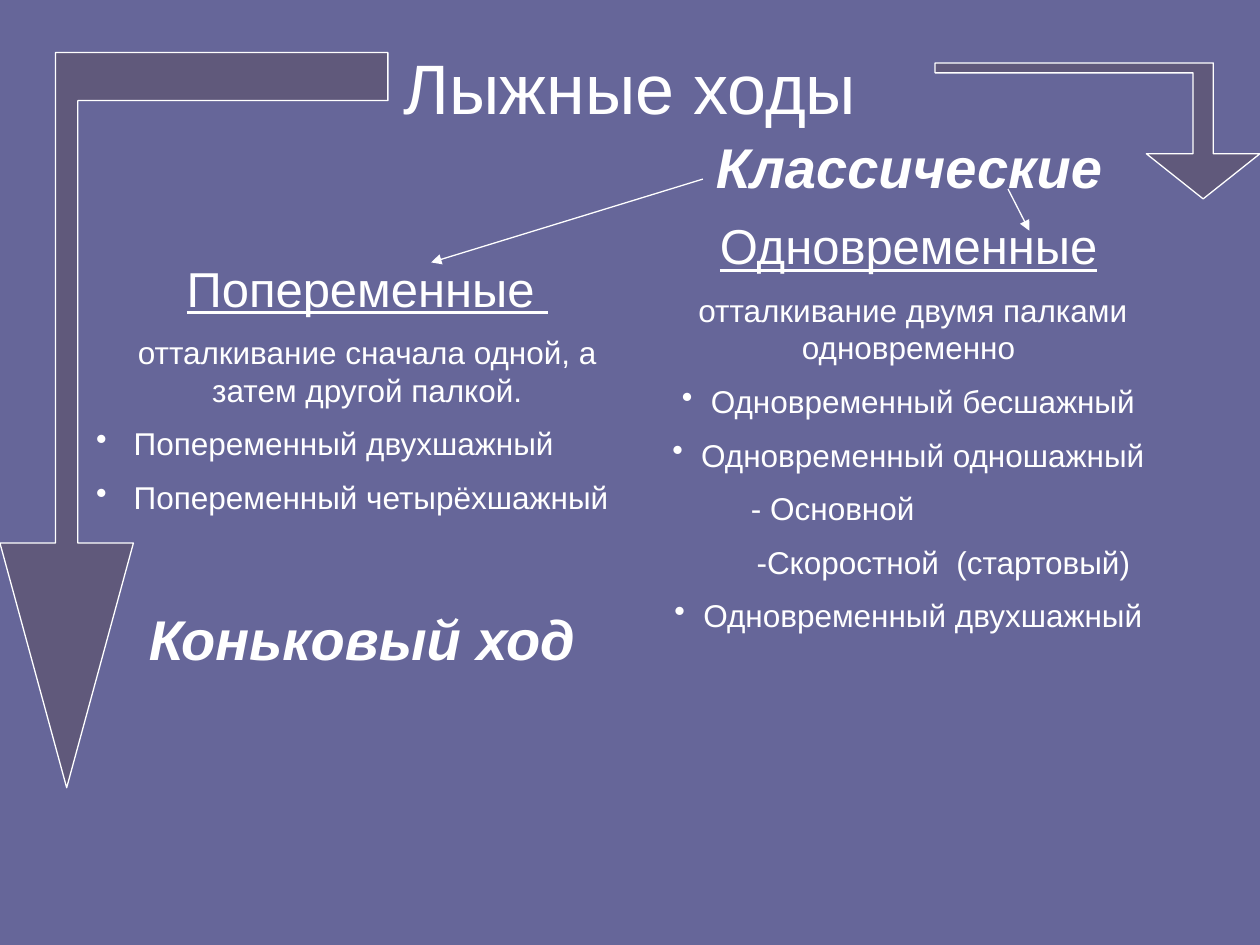
"""Build the slide about ski techniques."""
from dataclasses import dataclass, field

from pptx import Presentation
from pptx import util as u
from pptx.dml.color import RGBColor
from pptx.enum import shapes, text
from pptx.oxml import parse_xml
from pptx.oxml.ns import nsdecls, qn

BACKGROUND = RGBColor(0x66, 0x66, 0x99)
ARROW_FILL = RGBColor(0x60, 0x59, 0x7B)
WHITE = RGBColor(0xFF, 0xFF, 0xFF)
LEFT, CENTER = text.PP_ALIGN.LEFT, text.PP_ALIGN.CENTER
BULLET_INDENT = 0.58

TITLE = {"size": u.Pt(40)}
GROUP = {"size": u.Pt(32), "bold": True, "italic": True}
HEADING = {"size": u.Pt(28), "underline": True}
BODY = {"size": u.Pt(18)}


@dataclass
class Para:
    words: str
    style: dict = field(default_factory=lambda: BODY)
    align: int = CENTER
    bullet: bool = False
    margin: float = 0


@dataclass
class Block:
    left: float
    top: float
    width: float
    height: float
    paras: list[Para]
    anchor: int = text.MSO_ANCHOR.TOP


@dataclass
class Pointer:
    x1: float
    y1: float
    x2: float
    y2: float


@dataclass
class BentArrow:
    tail: float
    top: float
    bar_bottom: float
    shaft_outer: float
    shaft_inner: float
    head_outer: float
    head_inner: float
    neck: float
    tip: float


BENT_ARROWS = [
    BentArrow(7.82, 1.06, 2.03, 1.12, 1.57, 0, 2.69, 10.95, 15.88),
    BentArrow(18.85, 1.27, 1.47, 24.46, 24.05, 25.4, 23.11, 3.1, 4.01),
]
POINTERS = [Pointer(14.17, 3.61, 8.69, 5.29), Pointer(20.32, 3.81, 20.75, 4.65)]
BLOCKS = [
    Block(1.27, 0.76, 22.86, 1.98, [Para("Лыжные ходы", TITLE)], text.MSO_ANCHOR.MIDDLE),
    Block(1.69, 5.08, 11.43, 5.64, [
        Para("Попеременные ", HEADING),
        Para("отталкивание сначала одной, а затем другой палкой."),
        Para(" Попеременный двухшажный", align=LEFT, bullet=True),
        Para(" Попеременный четырёхшажный", align=LEFT, bullet=True),
    ]),
    Block(13.13, 4.23, 10.37, 11.38, [
        Para("Одновременные", HEADING),
        Para(" отталкивание двумя палками одновременно"),
        Para("Одновременный бесшажный", bullet=True),
        Para("Одновременный одношажный", bullet=True),
        Para("- Основной", align=LEFT, margin=1.76),
        Para("-Скоростной  (стартовый)", margin=1.41),
        Para("Одновременный двухшажный", bullet=True),
    ]),
    Block(14.18, 2.54, 9.1, 1.6, [Para("Классические", GROUP, LEFT)]),
    Block(2.75, 12.07, 9.31, 1.6, [Para("Коньковый ход", GROUP, LEFT)]),
]


def apply_format(target, values: dict) -> None:
    for name, value in values.items():
        setattr(target, name, value)


def outline(sp) -> None:
    sp.line.color.rgb = WHITE
    sp.line.width = u.Pt(0.75)


def indent(p, para: Para) -> None:
    ppr = p._p.get_or_add_pPr()
    margin = BULLET_INDENT if para.bullet else para.margin
    ppr.set("marL", str(u.Cm(margin)))
    ppr.set("indent", str(-u.Cm(margin) if para.bullet else 0))
    if para.bullet:
        ppr.append(parse_xml(f'<a:buChar {nsdecls("a")} char="•"/>'))


def add_block(s, block: Block) -> None:
    box = map(u.Cm, (block.left, block.top, block.width, block.height))
    tf = s.shapes.add_textbox(*box).text_frame
    apply_format(tf, {"word_wrap": True, "vertical_anchor": block.anchor})
    for i, para in enumerate(block.paras):
        p = tf.add_paragraph() if i else tf.paragraphs[0]
        p.alignment = para.align
        if i:
            p.space_before = para.style["size"] // 2
        indent(p, para)
        r = p.add_run()
        r.text = para.words
        apply_format(r.font, {"name": "Arial", **para.style})
        r.font.color.rgb = WHITE


def add_pointer(s, pointer: Pointer) -> None:
    ends = map(u.Cm, (pointer.x1, pointer.y1, pointer.x2, pointer.y2))
    sp = s.shapes.add_connector(shapes.MSO_CONNECTOR.STRAIGHT, *ends)
    outline(sp)
    sp.line._get_or_add_ln().append(
        parse_xml(f'<a:tailEnd {nsdecls("a")} type="triangle"/>'))
    sp._element.spPr.append(sp._element.makeelement(qn("a:effectLst")))


def add_bent_arrow(s, a: BentArrow) -> None:
    corners = [
        (a.tail, a.top), (a.shaft_outer, a.top), (a.shaft_outer, a.neck),
        (a.head_outer, a.neck), ((a.head_outer + a.head_inner) / 2, a.tip),
        (a.head_inner, a.neck), (a.shaft_inner, a.neck),
        (a.shaft_inner, a.bar_bottom), (a.tail, a.bar_bottom),
    ]
    start, *rest = [(u.Cm(x), u.Cm(y)) for x, y in corners]
    builder = s.shapes.build_freeform(*start)
    builder.add_line_segments(rest, close=True)
    sp = builder.convert_to_shape()
    sp.shadow.inherit = False
    sp.fill.solid()
    sp.fill.fore_color.rgb = ARROW_FILL
    outline(sp)


def main() -> None:
    prs = Presentation()
    apply_format(prs, {"slide_width": u.Cm(25.4), "slide_height": u.Cm(19.05)})
    s = prs.slides.add_slide(prs.slide_layouts[6])
    s.background.fill.solid()
    s.background.fill.fore_color.rgb = BACKGROUND
    for block in BLOCKS:
        add_block(s, block)
    for pointer in POINTERS:
        add_pointer(s, pointer)
    for arrow in BENT_ARROWS:
        add_bent_arrow(s, arrow)
    prs.save("out.pptx")


if __name__ == "__main__":
    main()
